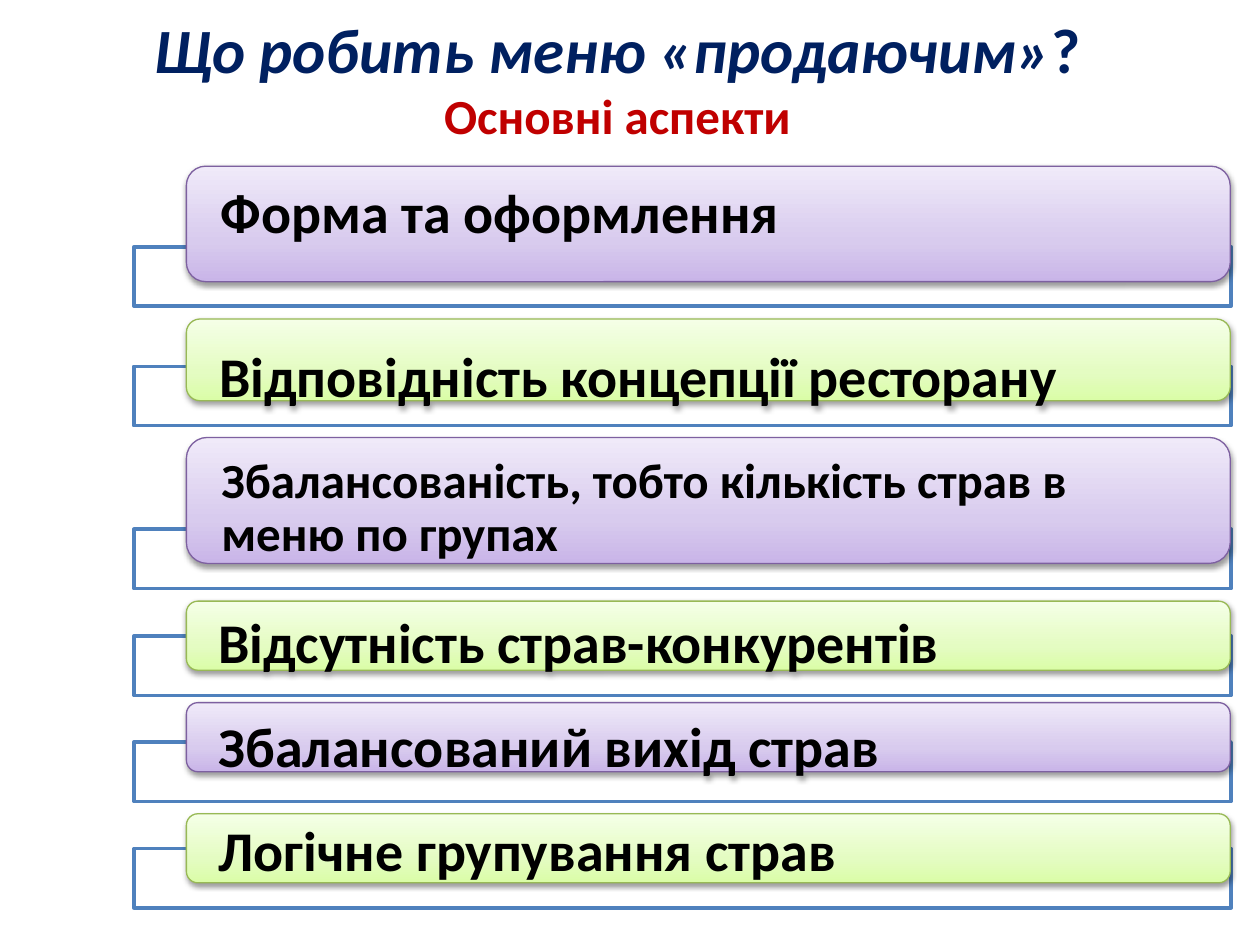
from copy import deepcopy
from dataclasses import dataclass

from lxml import etree
from pptx import Presentation
from pptx import util as u
from pptx.dml.color import RGBColor
from pptx.enum import shapes, text
from pptx.oxml import ns

Pt = u.Pt
FONT = "Calibri"
BLACK = RGBColor(0x00, 0x00, 0x00)
WHITE = RGBColor(0xFF, 0xFF, 0xFF)
NAVY = RGBColor(0x00, 0x20, 0x60)
RED = RGBColor(0xC0, 0x00, 0x00)
BLUE = RGBColor(0x4F, 0x81, 0xBD)


@dataclass(frozen=True)
class Tone:
    line: RGBColor
    stops: tuple[RGBColor, RGBColor, RGBColor]  # bottom to top


@dataclass(frozen=True)
class Row:
    label: str
    top: float
    height: float
    inset: float  # gap above the label
    frame: float  # top of the outline behind the card
    size: float = 32


LILAC = Tone(RGBColor(0x7D, 0x60, 0xA0),
             (RGBColor(0xC9, 0xB5, 0xE8), RGBColor(0xD8, 0xCB, 0xEE),
              RGBColor(0xF0, 0xEA, 0xF9)))
LIME = Tone(RGBColor(0x98, 0xB9, 0x55),
            (RGBColor(0xDA, 0xFD, 0xA7), RGBColor(0xE4, 0xFC, 0xC2),
             RGBColor(0xF5, 0xFF, 0xE7)))

ROWS = (
    Row("Форма та оформлення", 95, 66, 7.5, 141),
    Row("Відповідність концепції ресторану", 182.3, 46.7, 15, 209.3),
    Row("Збалансованість, тобто кількість страв в меню по групах",
        250, 72, 7, 302.4, 28),
    Row("Відсутність страв-конкурентів", 343.5, 39.5, 6, 363.5),
    Row("Збалансований вихід страв", 401.5, 39.5, 7.5, 424),
    Row("Логічне групування страв", 465, 39.5, 3.2, 484.8),
)


def write(para, words: str, *, size: float, color: RGBColor = BLACK,
          italic: bool = False) -> None:
    """Add one bold run to a paragraph."""
    run = para.add_run()
    run.text = words
    font = run.font
    font.name, font.size = FONT, Pt(size)
    font.bold, font.italic = True, italic
    font.color.rgb = color


def shade(shape, tone: Tone) -> None:
    """Fill with a vertical gradient of three stops."""
    fill = shape.fill
    fill.gradient()
    fill.gradient_angle = 90
    first = shape._element.spPr.find(".//" + ns.qn("a:gs"))
    first.addnext(deepcopy(first))
    for stop, color, place in zip(fill.gradient_stops, tone.stops, (0, 0.35, 1)):
        stop.color.rgb = color
        stop.position = place


def drop(shape) -> None:
    """Give the shape a soft shadow straight below."""
    shape.shadow.inherit = False
    effects = shape._element.spPr.find(ns.qn("a:effectLst"))
    outer = etree.SubElement(effects, ns.qn("a:outerShdw"),
                             blurRad=str(Pt(3.1)), dist=str(Pt(1.6)),
                             dir="5400000", rotWithShape="0")
    color = etree.SubElement(outer, ns.qn("a:srgbClr"), val="000000")
    etree.SubElement(color, ns.qn("a:alpha"), val="38000")


def frame(slide, top: float) -> None:
    box = slide.shapes.add_shape(shapes.MSO_SHAPE.RECTANGLE,
                                 Pt(76.5), Pt(top), Pt(627), Pt(34))
    box.shadow.inherit = False
    box.fill.solid()
    box.fill.fore_color.rgb = WHITE
    box.line.color.rgb = BLUE
    box.line.width = Pt(2)


def card(slide, row: Row, tone: Tone) -> None:
    box = slide.shapes.add_shape(shapes.MSO_SHAPE.ROUNDED_RECTANGLE,
                                 Pt(106.5), Pt(row.top), Pt(596.5), Pt(row.height))
    shade(box, tone)
    box.line.color.rgb = tone.line
    box.line.width = Pt(0.75)
    drop(box)
    body = box.text_frame
    body.word_wrap = True
    body.vertical_anchor = text.MSO_ANCHOR.TOP
    body.margin_left = body.margin_right = Pt(16.5)
    body.margin_top, body.margin_bottom = Pt(row.inset), 0
    para = body.paragraphs[0]
    para.alignment = text.PP_ALIGN.LEFT
    para.line_spacing = 0.9
    write(para, row.label, size=row.size)


def title(slide) -> None:
    box = slide.shapes.add_textbox(0, 0, Pt(705.6), Pt(88.5))
    body = box.text_frame
    body.word_wrap = True
    body.vertical_anchor = text.MSO_ANCHOR.MIDDLE
    head, sub = body.paragraphs[0], body.add_paragraph()
    head.alignment = sub.alignment = text.PP_ALIGN.CENTER
    write(head, "Що робить меню «продаючим»", size=36, color=NAVY, italic=True)
    write(head, "?", size=36, color=NAVY)
    write(sub, "Основні аспекти", size=28, color=RED)


def main() -> None:
    deck = Presentation()
    deck.slide_width, deck.slide_height = Pt(720), Pt(540)
    slide = deck.slides.add_slide(deck.slide_layouts[6])

    # Heading
    title(slide)

    # Cards in alternating tones, each over its outline
    for i, row in enumerate(ROWS):
        frame(slide, row.frame)
        card(slide, row, (LILAC, LIME)[i % 2])

    deck.save("out.pptx")


if __name__ == "__main__":
    main()
